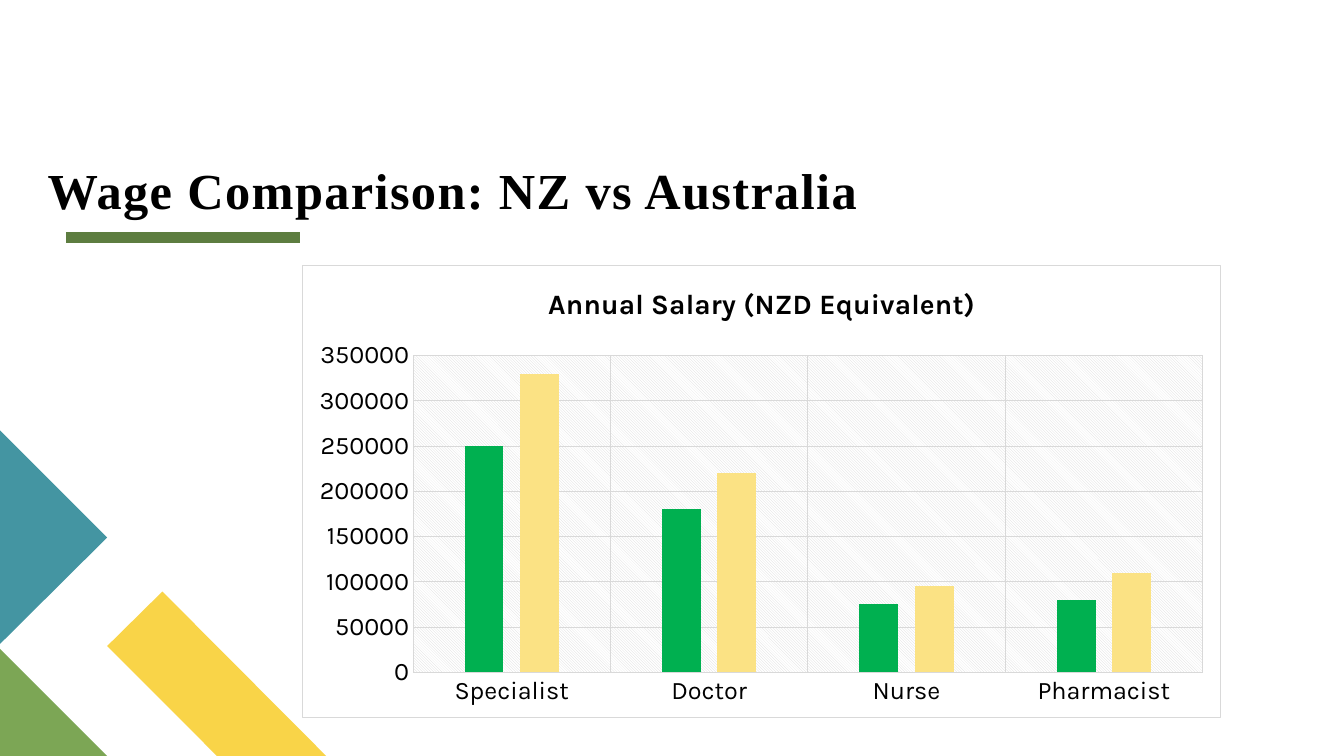
from pptx import Presentation
from pptx.chart.data import CategoryChartData
from pptx.dml.color import RGBColor
from pptx.enum.chart import XL_CHART_TYPE, XL_TICK_MARK
from pptx.enum.shapes import MSO_CONNECTOR
from pptx.enum.text import MSO_ANCHOR
from pptx.oxml import parse_xml
from pptx.oxml.ns import nsdecls
from pptx.util import Pt

HUES = {
    "black": "000000", "white": "FFFFFF", "grid": "D9D9D9",
    "rule": "5D7D40", "yellow": "F9D448", "green": "7CA655",
    "teal": "4495A2", "nz": "00B050", "aus": "FBE284",
}
JOBS = ["Specialist", "Doctor", "Nurse", "Pharmacist"]
WAGES = [
    ("Series 1", "nz", [250000, 180000, 75000, 80000]),
    ("Series 2", "aus", [330000, 220000, 95000, 110000]),
]


def hue(name):
    return RGBColor.from_string(HUES[name])


def set_font(font, face, size, bold=False):
    font.name, font.size, font.bold = face, Pt(size), bold
    font.color.rgb = hue("black")


def set_line(line, name, width):
    line.color.rgb = hue(name)
    line.width = Pt(width)


def add_patch(slide, name, points):
    spots = [(Pt(x), Pt(y)) for x, y in points]
    pen = slide.shapes.build_freeform(*spots[0], scale=1.0)
    pen.add_line_segments(spots[1:], close=True)
    patch = pen.convert_to_shape()
    patch.shadow.inherit = False
    patch.fill.solid()
    patch.fill.fore_color.rgb = hue(name)
    patch.line.fill.background()


def add_rule(slide, left, right, top):
    rule = slide.shapes.add_connector(
        MSO_CONNECTOR.STRAIGHT, Pt(left), Pt(top), Pt(right), Pt(top))
    set_line(rule.line, "rule", 8)
    rule._element.spPr.append(parse_xml(f"<a:effectLst {nsdecls('a')}/>"))


def add_title(slide, text, left, top, width, height):
    box = slide.shapes.add_textbox(Pt(left), Pt(top), Pt(width), Pt(height))
    frame = box.text_frame
    frame.word_wrap = True
    frame.vertical_anchor = MSO_ANCHOR.BOTTOM
    frame.margin_left = frame.margin_right = 0
    frame.margin_top = frame.margin_bottom = 0
    para = frame.paragraphs[0]
    para.line_spacing = 0.8
    run = para.add_run()
    run.text = text
    set_font(run.font, "Times New Roman", 36, True)
    run.font._element.set("spc", "100")


def style_axis(axis):
    axis.major_tick_mark = axis.minor_tick_mark = XL_TICK_MARK.NONE
    axis.has_major_gridlines = True
    set_line(axis.major_gridlines.format.line, "grid", 0.75)
    set_font(axis.tick_labels.font, "Karla", 18)


def add_frames(chart):
    """Fill and border of the chart, hatching and place of the plot."""
    def paint(name):
        return f'<a:srgbClr val="{HUES[name]}"/>'

    root = chart._chartSpace
    root.chart.addnext(parse_xml(
        f'<c:spPr {nsdecls("c", "a")}>'
        f'<a:solidFill>{paint("white")}</a:solidFill>'
        f'<a:ln w="{Pt(0.75)}"><a:solidFill>{paint("grid")}</a:solidFill>'
        '</a:ln></c:spPr>'))
    plot = root.chart.plotArea
    plot.append(parse_xml(
        f'<c:spPr {nsdecls("c", "a")}><a:pattFill prst="ltDnDiag">'
        f'<a:fgClr>{paint("grid")}</a:fgClr>'
        f'<a:bgClr>{paint("white")}</a:bgClr></a:pattFill></c:spPr>'))
    for old in plot.xpath("c:layout"):
        plot.remove(old)
    place = {"x": 0.12, "y": 0.2, "w": 0.86, "h": 0.7}
    modes = "".join(f'<c:{k}Mode val="edge"/>' for k in "xy")
    sizes = "".join(f'<c:{k} val="{v}"/>' for k, v in place.items())
    plot.insert(0, parse_xml(
        f'<c:layout {nsdecls("c")}><c:manualLayout>'
        f'<c:layoutTarget val="inner"/>{modes}{sizes}'
        '</c:manualLayout></c:layout>'))


def add_bars(slide, title, left, top, width, height):
    data = CategoryChartData()
    data.categories = JOBS
    for name, _, wages in WAGES:
        data.add_series(name, wages)
    chart = slide.shapes.add_chart(
        XL_CHART_TYPE.COLUMN_CLUSTERED, Pt(left), Pt(top),
        Pt(width), Pt(height), data).chart
    set_font(chart.font, "Karla", 18)
    chart.has_legend = False

    # Heading
    chart.has_title = True
    run = chart.chart_title.text_frame.paragraphs[0].add_run()
    run.text = title
    set_font(run.font, "Karla", 20, True)
    chart.chart_title.include_in_layout = False

    # Bars
    plot = chart.plots[0]
    plot.vary_by_categories = False
    plot.gap_width, plot.overlap = 267, -43
    for bars, (_, shade, _) in zip(plot.series, WAGES):
        bars.format.fill.solid()
        bars.format.fill.fore_color.rgb = hue(shade)

    # Axes
    for axis in (chart.category_axis, chart.value_axis):
        style_axis(axis)
    set_line(chart.category_axis.format.line, "grid", 0.75)
    scale = chart.value_axis
    scale.format.line.fill.background()
    scale.minimum_scale, scale.maximum_scale = 0, 350000
    scale.major_unit = 50000
    scale.tick_labels.number_format = "General"
    scale.tick_labels.number_format_is_linked = False
    add_frames(chart)


def main():
    deck = Presentation()
    deck.slide_width, deck.slide_height = Pt(960), Pt(540)
    slide = deck.slides.add_slide(deck.slide_layouts[6])

    # Corner pattern and rule
    add_rule(slide, 47, 214.5, 169.5)
    add_patch(slide, "yellow",
              [(233, 540), (155, 540), (76.5, 461.5), (116, 422.5)])
    add_patch(slide, "green", [(76.5, 540), (0, 540), (0, 463.5)])
    add_patch(slide, "teal", [(0, 307.5), (76.5, 384), (0, 460)])

    # Chart and title
    add_bars(slide, "Annual Salary (NZD Equivalent)", 216, 189, 656.5, 324)
    add_title(slide, "Wage Comparison: NZ vs Australia", 34, 99.5, 612, 57)
    deck.save("out.pptx")


if __name__ == "__main__":
    main()
